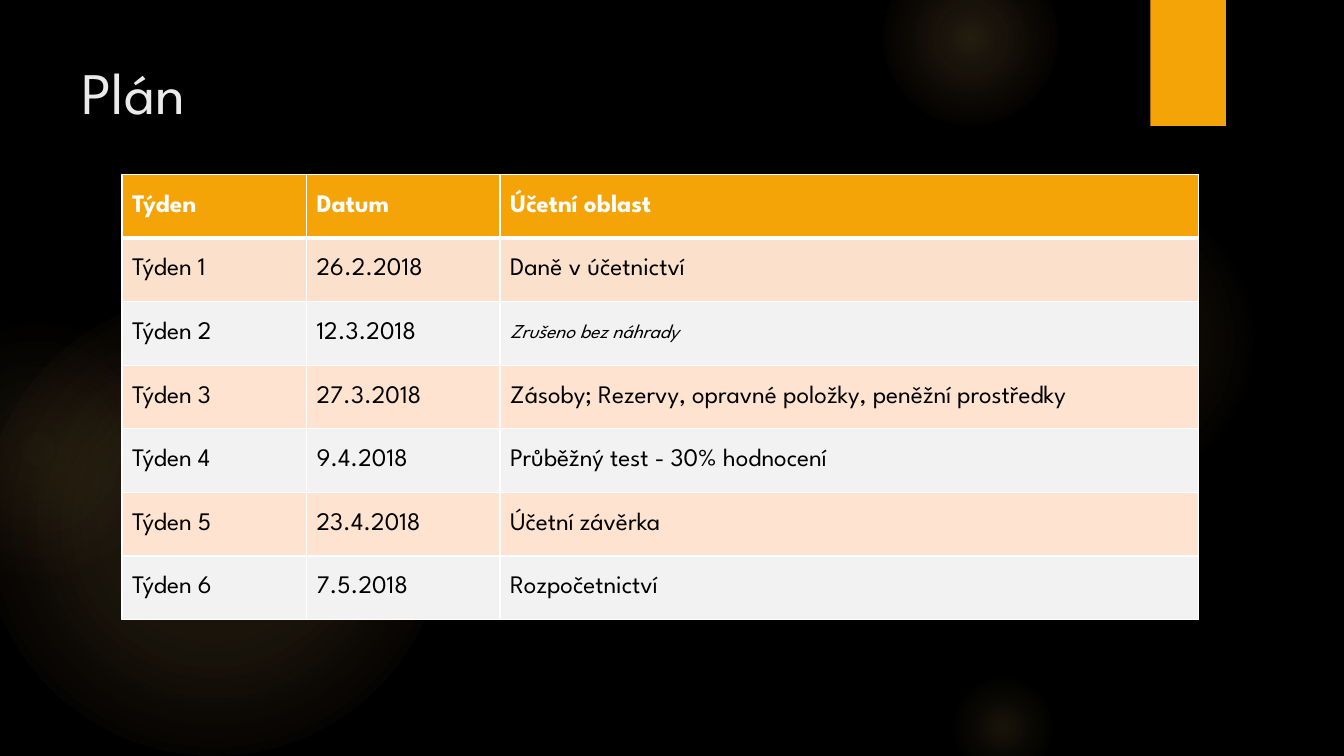
from dataclasses import dataclass

from lxml.etree import SubElement
from pptx import Presentation
from pptx.dml.color import RGBColor
from pptx.enum.shapes import MSO_SHAPE
from pptx.enum.text import MSO_ANCHOR, PP_ALIGN
from pptx.oxml import parse_xml
from pptx.oxml.ns import nsdecls, qn
from pptx.util import Inches, Pt


@dataclass(frozen=True)
class Theme:
    font: str = "League Spartan"
    back: str = "000000"
    ink: str = "000000"
    title: str = "EBEBEB"
    accent: str = "F5A408"
    glow: str = "FAC96A"
    blush: str = "F59B74"
    white: str = "FFFFFF"
    first: str = "FBE0CC"
    odd: str = "FEE3D1"
    even: str = "F2F2F2"
    title_size: int = 42
    body_size: int = 18
    note_size: int = 14
    thin: int = 1
    thick: int = 3


THEME = Theme()

# left, top, diameter, gradient stops (position %, colour, opacity %)
GLOWS = [
    (-0.17, 2.92, 4.58, [(0, THEME.glow, 11), (36, THEME.glow, 10), (75, THEME.glow, 0)]),
    (-0.92, 3.17, 2.58, [(0, THEME.glow, 8), (36, THEME.glow, 5), (71, THEME.blush, 0)]),
    (9.41, 1.83, 3.08, [(0, THEME.glow, 7), (36, THEME.glow, 6), (69, THEME.glow, 0)]),
    (8.75, -0.5, 1.75, [(0, THEME.glow, 14), (36, THEME.glow, 7), (73, THEME.glow, 0)]),
    (9.41, 6.67, 1.08, [(0, THEME.glow, 10), (31, THEME.glow, 5), (66, THEME.glow, 0)]),
]

HEAD = ("Týden", "Datum", "Účetní oblast")
CANCELLED = "Zrušeno bez náhrady"
PLAN = [
    ("26.2.2018", "Daně v účetnictví"),
    ("12.3.2018", CANCELLED),
    ("27.3.2018", "Zásoby; Rezervy, opravné položky, peněžní prostředky"),
    ("9.4.2018", "Průběžný test - 30% hodnocení"),
    ("23.4.2018", "Účetní závěrka"),
    ("7.5.2018", "Rozpočetnictví"),
]


class Deck:
    def __init__(self, theme):
        self.theme = theme
        self.deck = Presentation()
        self.deck.slide_width = Inches(13.33)
        self.deck.slide_height = Inches(7.5)
        self.slide = self.deck.slides.add_slide(self.deck.slide_layouts[5])
        self.paint(self.slide.background, theme.back)

    def paint(self, item, color):
        item.fill.solid()
        item.fill.fore_color.rgb = RGBColor.from_string(color)

    def style(self, frame, size, color, bold=False, italic=False):
        for para in frame.paragraphs:
            para.alignment = PP_ALIGN.LEFT
            for run in para.runs:
                font = run.font
                font.name = self.theme.font
                font.size = Pt(size)
                font.bold = bold
                font.italic = italic
                font.color.rgb = RGBColor.from_string(color)

    def shape(self, kind, left, top, width, height, color):
        shape = self.slide.shapes.add_shape(
            kind, Inches(left), Inches(top), Inches(width), Inches(height))
        shape.shadow.inherit = False
        shape.line.fill.background()
        self.paint(shape, color)
        return shape

    def glow(self, left, top, size, stops):
        """Add a circle that fades out from its centre."""
        shape = self.shape(MSO_SHAPE.OVAL, left, top, size, size, self.theme.glow)
        grad = parse_xml(f'<a:gradFill {nsdecls("a")} rotWithShape="1"/>')
        list_ = SubElement(grad, qn("a:gsLst"))
        for pos, color, alpha in stops:
            stop = SubElement(list_, qn("a:gs"), pos=str(pos * 1000))
            tint = SubElement(stop, qn("a:srgbClr"), val=color)
            SubElement(tint, qn("a:alpha"), val=str(alpha * 1000))
        radial = SubElement(grad, qn("a:path"), {"path": "circle"})
        SubElement(radial, qn("a:fillToRect"), dict.fromkeys("ltrb", "50000"))
        solid = shape.element.spPr.find(qn("a:solidFill"))
        solid.getparent().replace(solid, grad)

    def title(self, text, left, top, width, height):
        title = self.slide.shapes.title
        title.left, title.top = Inches(left), Inches(top)
        title.width, title.height = Inches(width), Inches(height)
        frame = title.text_frame
        frame.text = text
        frame.word_wrap = True
        frame.vertical_anchor = MSO_ANCHOR.TOP
        self.style(frame, self.theme.title_size, self.theme.title)
        title.element.getparent().append(title.element)

    def border(self, cell, top, bottom):
        props = cell._tc.get_or_add_tcPr()
        thin = self.theme.thin
        edges = {"lnL": thin, "lnR": thin, "lnT": top, "lnB": bottom}
        for spot, (tag, width) in enumerate(edges.items()):
            props.insert(spot, parse_xml(
                f'<a:{tag} {nsdecls("a")} w="{Pt(width)}"><a:solidFill>'
                f'<a:srgbClr val="{self.theme.white}"/></a:solidFill></a:{tag}>'))

    def cell(self, cell, text, row):
        theme = self.theme
        head = row == 0
        note = text == CANCELLED
        cell.text = text
        cell.vertical_anchor = MSO_ANCHOR.MIDDLE
        self.style(cell.text_frame, theme.note_size if note else theme.body_size,
                   theme.white if head else theme.ink, bold=head, italic=note)
        band = theme.odd if row % 2 else theme.even
        self.paint(cell, {0: theme.accent, 1: theme.first}.get(row, band))
        self.border(cell, theme.thick if row == 1 else theme.thin,
                    theme.thick if head else theme.thin)

    def table(self, rows, left, top, widths, height):
        table = self.slide.shapes.add_table(
            len(rows), len(widths), Inches(left), Inches(top),
            Inches(sum(widths)), Inches(height)).table
        for col, width in zip(table.columns, widths):
            col.width = Inches(width)
        for r, row in enumerate(rows):
            for c, text in enumerate(row):
                self.cell(table.cell(r, c), text, r)


def main():
    deck = Deck(THEME)
    for glow in GLOWS:
        deck.glow(*glow)
    deck.shape(MSO_SHAPE.RECTANGLE, 11.41, 0, 0.75, 1.25, THEME.accent)
    deck.title("Plán", 0.71, 0.5, 10.29, 1.53)
    weeks = [(f"Týden {n}", *row) for n, row in enumerate(PLAN, 1)]
    deck.table([HEAD, *weeks], 1.21, 1.73, (1.83, 1.92, 6.93), 4.42)
    deck.deck.save("out.pptx")


if __name__ == "__main__":
    main()
